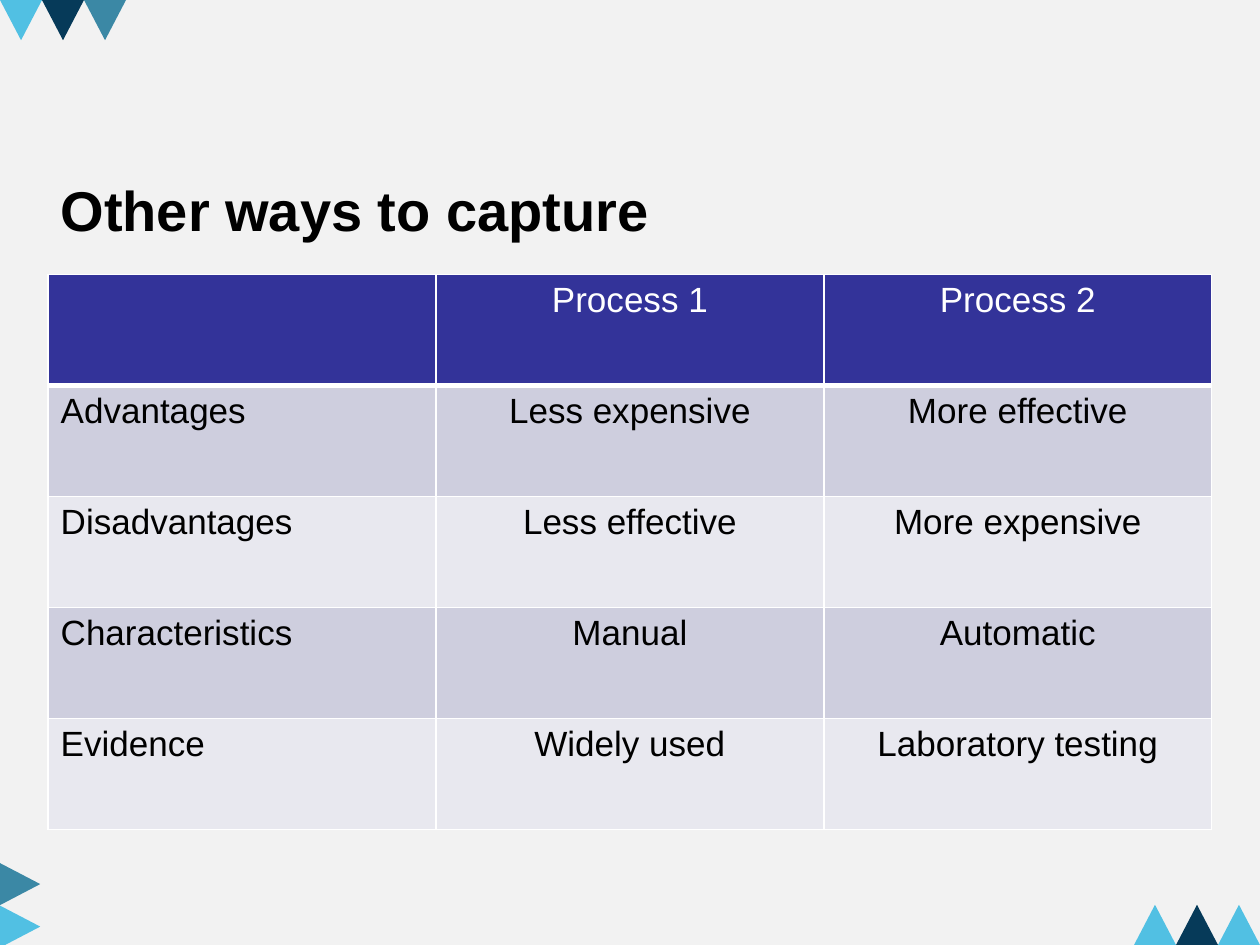
from dataclasses import dataclass

from lxml.etree import SubElement
from pptx import Presentation
from pptx.dml.color import RGBColor
from pptx.enum.shapes import MSO_SHAPE
from pptx.enum.text import MSO_ANCHOR, PP_ALIGN
from pptx.oxml.ns import qn
from pptx.util import Pt


@dataclass(frozen=True)
class Theme:
    font: str = "Arial"
    title_size: int = 32
    table_size: int = 20
    page: str = "F2F2F2"
    ink: str = "000000"
    white: str = "FFFFFF"
    header: str = "333399"
    bands: tuple = ("CECEDE", "E8E8EF")
    sky: str = "51C0E3"
    navy: str = "063A59"
    teal: str = "3B88A5"


THEME = Theme()
TRIANGLE = (24, 23)
ROWS = [
    ("", "Process 1", "Process 2"),
    ("Advantages", "Less expensive", "More effective"),
    ("Disadvantages", "Less effective", "More expensive"),
    ("Characteristics", "Manual", "Automatic"),
    ("Evidence", "Widely used", "Laboratory testing"),
]


def apply_format(target, values):
    for name, value in values.items():
        setattr(target, name, value)


def paint(fill, color):
    fill.solid()
    fill.fore_color.rgb = RGBColor.from_string(color)


def write(para, text, size, color, bold=False, align=PP_ALIGN.LEFT):
    para.alignment = align
    span = para.add_run()
    span.text = text
    apply_format(span.font, {"name": THEME.font, "size": Pt(size), "bold": bold})
    span.font.color.rgb = RGBColor.from_string(color)


def add_triangles(page, box, colors, rotation=0):
    left, top, step_x, step_y = box
    width, height = TRIANGLE
    for index, color in enumerate(colors):
        triangle = page.shapes.add_shape(
            MSO_SHAPE.ISOSCELES_TRIANGLE,
            Pt(left + index * step_x), Pt(top + index * step_y), Pt(width), Pt(height))
        triangle.rotation = rotation
        triangle.shadow.inherit = False
        paint(triangle.fill, color)
        triangle.line.fill.background()


def add_title(page, box, text):
    frame = page.shapes.add_textbox(*map(Pt, box)).text_frame
    apply_format(frame, {"word_wrap": True, "vertical_anchor": MSO_ANCHOR.MIDDLE})
    write(frame.paragraphs[0], text, THEME.title_size, THEME.ink, bold=True)


def add_borders(cell, bottom):
    properties = cell._tc.get_or_add_tcPr()
    for side, width in {"L": 1, "R": 1, "T": 1, "B": bottom}.items():
        line = SubElement(properties, qn(f"a:ln{side}"), w=str(Pt(width)))
        fill = SubElement(line, qn("a:solidFill"))
        SubElement(fill, qn("a:srgbClr"), val=THEME.white)


def add_comparison(page, box, rows):
    table = page.shapes.add_table(len(rows), len(rows[0]), *map(Pt, box)).table
    for row_index, row in enumerate(rows):
        is_header = row_index == 0
        fill = THEME.header if is_header else THEME.bands[(row_index - 1) % 2]
        color = THEME.white if is_header else THEME.ink
        for column_index, text in enumerate(row):
            cell = table.cell(row_index, column_index)
            add_borders(cell, 3 if is_header else 1)
            paint(cell.fill, fill)
            if text:
                align = PP_ALIGN.CENTER if column_index else PP_ALIGN.LEFT
                write(cell.text_frame.paragraphs[0], text, THEME.table_size, color, align=align)


def main():
    deck = Presentation()
    apply_format(deck, {"slide_width": Pt(720), "slide_height": Pt(540)})
    page = deck.slides.add_slide(deck.slide_layouts[6])
    paint(page.background.fill, THEME.page)
    add_triangles(page, (-0.5, 493.7, 0, 24.3), (THEME.teal, THEME.sky), rotation=90)
    add_triangles(page, (0, 0, 24, 0), (THEME.sky, THEME.navy, THEME.teal), rotation=180)
    add_triangles(page, (648, 517, 24, 0), (THEME.sky, THEME.navy, THEME.sky))
    add_title(page, (27.5, 92, 665, 55), "Other ways to capture")
    add_comparison(page, (27.5, 156.8, 665, 317.2), ROWS)
    deck.save("out.pptx")


if __name__ == "__main__":
    main()
